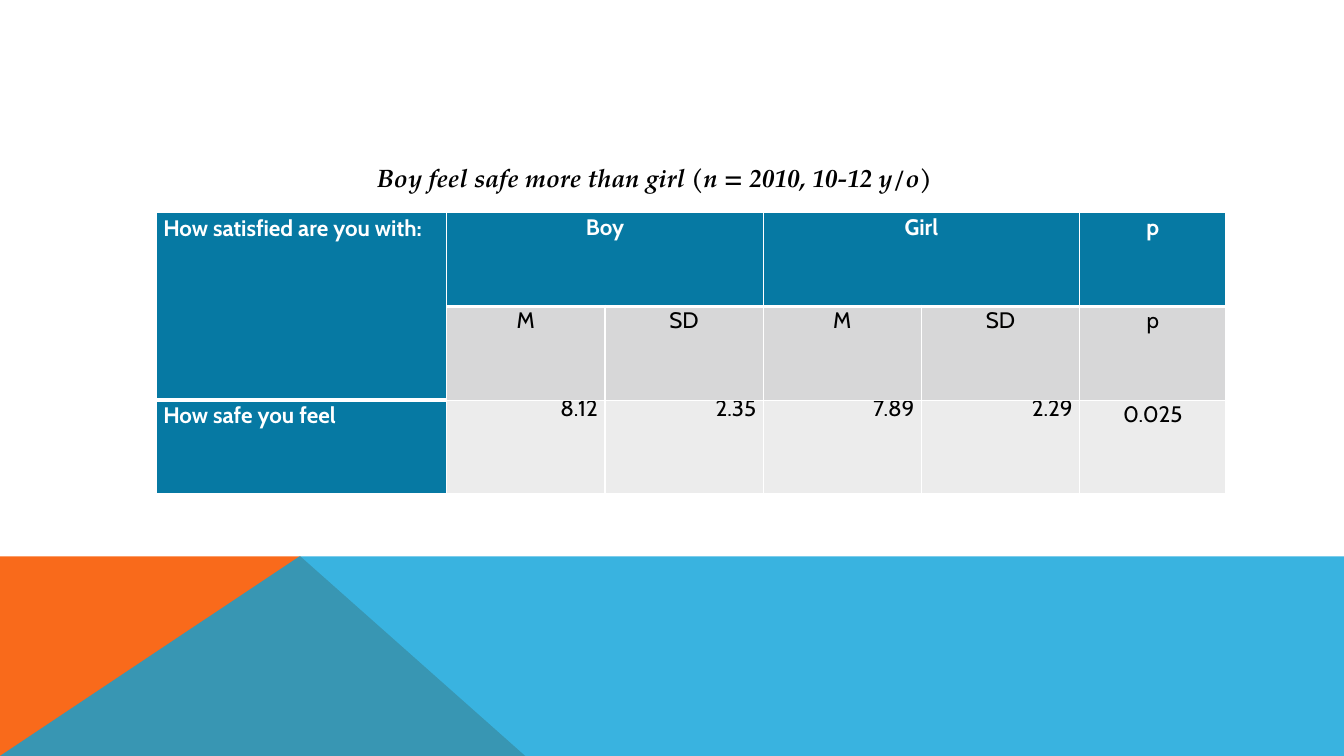
from lxml import etree
from pptx import Presentation
from pptx.dml.color import RGBColor
from pptx.enum.text import MSO_ANCHOR, MSO_AUTO_SIZE, PP_ALIGN
from pptx.oxml.ns import qn
from pptx.util import Inches, Pt

LEFT, CENTER, RIGHT = PP_ALIGN.LEFT, PP_ALIGN.CENTER, PP_ALIGN.RIGHT
TOP = MSO_ANCHOR.TOP
NO_AUTOFIT = MSO_AUTO_SIZE.NONE

THEME = {
    "orange": "F96A1B", "sky": "08A1D9", "header": "0679A3",
    "subheader": "D7D7D8", "body": "ECECEC", "white": "FFFFFF", "black": "000000",
    "title_font": "TeX Gyre Pagella", "table_font": "Cabin",
    "title_size": Pt(18), "table_size": Pt(16),
    "thin": Pt(1), "thick": Pt(3),
}


def style_font(font, color, **values):
    for name, value in values.items():
        setattr(font, name, value)
    font.color.rgb = RGBColor.from_string(THEME[color])


def add_border(cell, side, width):
    line = etree.SubElement(cell._tc.get_or_add_tcPr(), qn("a:" + side), w=str(width))
    fill = etree.SubElement(line, qn("a:solidFill"))
    etree.SubElement(fill, qn("a:srgbClr"), val=THEME["white"])


prs = Presentation()
prs.slide_width, prs.slide_height = Inches(13.33), Inches(7.5)
slide = prs.slides.add_slide(prs.slide_layouts[5])

# Coloured bands along the bottom
bands = [
    ("orange", None, [(0, 7.5), (0, 5.52), (2.98, 5.52), (5.21, 7.5)]),
    ("sky", 80, [(0, 7.5), (2.97, 5.52), (13.33, 5.52), (13.33, 7.5)]),
]
for color, opacity, corners in bands:
    points = [(Inches(x), Inches(y)) for x, y in corners]
    outline = slide.shapes.build_freeform(*points[0])
    outline.add_line_segments(points[1:], close=True)
    band = outline.convert_to_shape()
    band.shadow.inherit = False
    band.line.fill.background()
    band.fill.solid()
    band.fill.fore_color.rgb = RGBColor.from_string(THEME[color])
    if opacity:
        shade = band._element.spPr.find(qn("a:solidFill"))[0]
        etree.SubElement(shade, qn("a:alpha"), val=str(opacity * 1000))

# Title
title = slide.shapes.title
title.left, title.top = Inches(3.64), Inches(1.41)
title.width, title.height = Inches(5.97), Inches(0.51)
title_frame = title.text_frame
title_frame.text = "Boy feel safe more than girl (n = 2010, 10-12 y/o)"
title_frame.word_wrap = False
title_frame.auto_size = NO_AUTOFIT
title_frame.vertical_anchor = TOP
heading = title_frame.paragraphs[0]
heading.alignment = LEFT
heading.line_spacing = 1.5
style_font(heading.runs[0].font, "black", name=THEME["title_font"],
           size=THEME["title_size"], bold=True, italic=True)

# Table of satisfaction scores
scores = [
    ["How satisfied are you with:", "Boy", "", "Girl", "", "p"],
    ["", "M", "SD", "M", "SD", "p"],
    ["How safe you feel", "8.12", "2.35", "7.89", "2.29", "0.025"],
]
col_widths = [2.88, 1.57, 1.57, 1.57, 1.57, 1.45]
row_height = 0.93
row_fills = ["header", "subheader", "body"]
thick_below = {(0, col) for col in range(1, 6)} | {(0, 0), (1, 0)}

table = slide.shapes.add_table(
    len(scores), len(col_widths), Inches(1.55), Inches(2.11),
    Inches(sum(col_widths)), Inches(row_height * len(scores))).table
for column, width in zip(table.columns, col_widths):
    column.width = Inches(width)
for table_row in table.rows:
    table_row.height = Inches(row_height)

for row, texts in enumerate(scores):
    for col, text in enumerate(texts):
        cell = table.cell(row, col)
        is_header = row == 0 or col == 0
        is_score = row == 2 and 1 <= col <= 4

        cell.margin_left = cell.margin_right = Inches(0.07)
        cell.margin_top = cell.margin_bottom = 0
        above = THEME["thick" if (row - 1, col) in thick_below else "thin"]
        below = THEME["thick" if (row, col) in thick_below else "thin"]
        for side, width in (("lnL", THEME["thin"]), ("lnR", THEME["thin"]),
                            ("lnT", above), ("lnB", below)):
            add_border(cell, side, width)
        cell.fill.solid()
        fill_name = "header" if is_header else row_fills[row]
        cell.fill.fore_color.rgb = RGBColor.from_string(THEME[fill_name])

        cell.text = text
        entry = cell.text_frame.paragraphs[0]
        entry.alignment = LEFT if col == 0 else RIGHT if is_score else CENTER
        entry.line_spacing = 1.07 if col == 0 else Pt(16) if is_score else Pt(20)
        style_font(entry.font, "white" if is_header else "black",
                   name=THEME["table_font"], size=THEME["table_size"], bold=is_header)
        for run in entry.runs:
            style_font(run.font, "white" if is_header else "black",
                       name=THEME["table_font"], size=THEME["table_size"], bold=is_header)

for first, last in (((0, 0), (1, 0)), ((0, 1), (0, 2)), ((0, 3), (0, 4))):
    table.cell(*first).merge(table.cell(*last))

prs.save("out.pptx")
